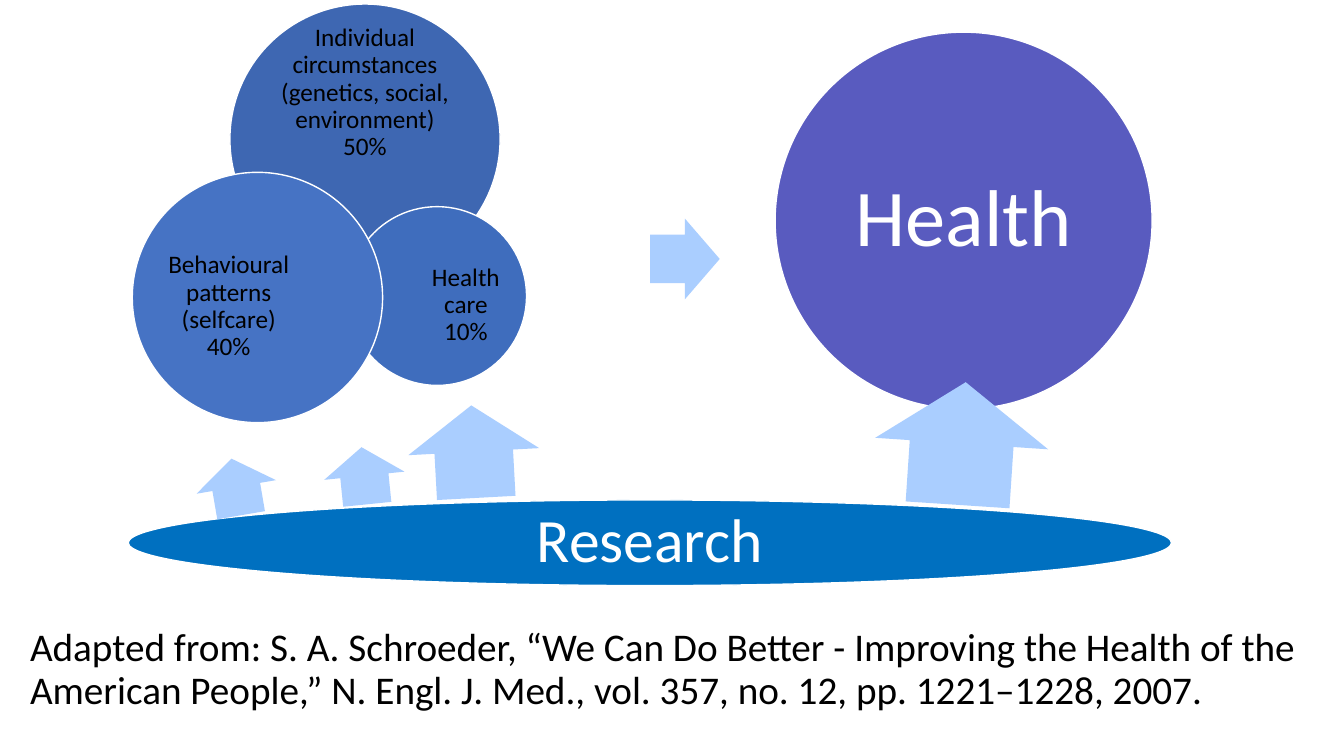
from pptx import Presentation
from pptx.dml.color import RGBColor
from pptx.enum.shapes import MSO_SHAPE
from pptx.enum.text import MSO_ANCHOR, PP_ALIGN
from pptx.util import Pt

BLACK = RGBColor(0x00, 0x00, 0x00)
WHITE = RGBColor(0xFF, 0xFF, 0xFF)
CIRCUMSTANCES_BLUE = RGBColor(0x3E, 0x67, 0xB2)
CARE_BLUE = RGBColor(0x3F, 0x6D, 0xBD)
BEHAVIOUR_BLUE = RGBColor(0x46, 0x73, 0xC4)
HEALTH_PURPLE = RGBColor(0x59, 0x5B, 0xBF)
RESEARCH_BLUE = RGBColor(0x00, 0x70, 0xC0)
ARROW_BLUE = RGBColor(0xAA, 0xCE, 0xFF)

# Share of an ellipse's width or height outside its inner text area, per side
ELLIPSE_INSET = 0.1464


def write_text(frame, text, size, color=BLACK, align=PP_ALIGN.CENTER, margins=(7.2, 3.6, 7.2, 3.6)):
    """Fill a frame with one paragraph; margins are left, top, right, bottom."""
    frame.word_wrap = True
    frame.vertical_anchor = MSO_ANCHOR.MIDDLE
    frame.margin_left, frame.margin_top, frame.margin_right, frame.margin_bottom = map(Pt, margins)
    paragraph = frame.paragraphs[0]
    paragraph.text = text
    paragraph.alignment = align
    paragraph.line_spacing = 0.9
    for run in paragraph.runs:
        run.font.name = "Calibri"
        run.font.size = Pt(size)
        run.font.color.rgb = color


presentation = Presentation()
presentation.slide_width = Pt(960)
presentation.slide_height = Pt(540)
slide = presentation.slides.add_slide(presentation.slide_layouts[6])

citation = slide.shapes.add_textbox(Pt(14.4), Pt(435.6), Pt(921.6), Pt(86.4))
write_text(
    citation.text_frame,
    "Adapted from: S. A. Schroeder, “We Can Do Better - Improving the Health of the "
    "American People,” N. Engl. J. Med., vol. 357, no. 12, pp. 1221–1228, 2007.",
    28,
    align=PP_ALIGN.LEFT,
)

# Text, left, top, width, height, fill, text size, text colour,
# text distance from the left, top, right and bottom of the ellipse
ellipses = [
    ("Individual\vcircumstances\v(genetics, social, environment)\v50%",
     164.2, 2.9, 193, 193, CIRCUMSTANCES_BLUE, 18, BLACK, (6, 6, 6, 72)),
    ("Health care\v10%",
     248.4, 147.6, 127.7, 127.7, CARE_BLUE, 18, BLACK, (59, 50, 18, 37)),
    ("Behavioural patterns (selfcare)\v40%",
     94.5, 123.1, 178.8, 178.8, BEHAVIOUR_BLUE, 18, BLACK, (18, 50, 59, 37)),
    ("Health",
     553.7, 23, 269.3, 269.3, HEALTH_PURPLE, 57.5, WHITE, (52, 52, 52, 52)),
    ("Research",
     91.6, 357.1, 745.2, 61.2, RESEARCH_BLUE, 44, WHITE, (110, 9, 110, 9)),
]
for text, left, top, width, height, fill, size, color, distances in ellipses:
    ellipse = slide.shapes.add_shape(MSO_SHAPE.OVAL, Pt(left), Pt(top), Pt(width), Pt(height))
    ellipse.shadow.inherit = False
    ellipse.fill.solid()
    ellipse.fill.fore_color.rgb = fill
    ellipse.line.color.rgb = WHITE
    ellipse.line.width = Pt(1)
    margins = [distance - ELLIPSE_INSET * side
               for distance, side in zip(distances, (width, height, width, height))]
    write_text(ellipse.text_frame, text, size, color=color, margins=margins)

# Left, top, width, height, rotation
arrows = [
    (464.4, 156.2, 49.7, 57.6, 0),
    (305.3, 275.8, 66.2, 93.6, 266.9),
    (239.8, 311, 41, 57.6, 264.2),
    (148.3, 319, 41, 57.6, 260.3),
    (643, 254.9, 87.8, 123.8, 273.8),
]
for left, top, width, height, rotation in arrows:
    arrow = slide.shapes.add_shape(MSO_SHAPE.RIGHT_ARROW, Pt(left), Pt(top), Pt(width), Pt(height))
    arrow.shadow.inherit = False
    arrow.adjustments[0] = 0.6
    arrow.adjustments[1] = 0.5
    arrow.rotation = rotation
    arrow.fill.solid()
    arrow.fill.fore_color.rgb = ARROW_BLUE
    arrow.line.fill.background()

presentation.save("out.pptx")
